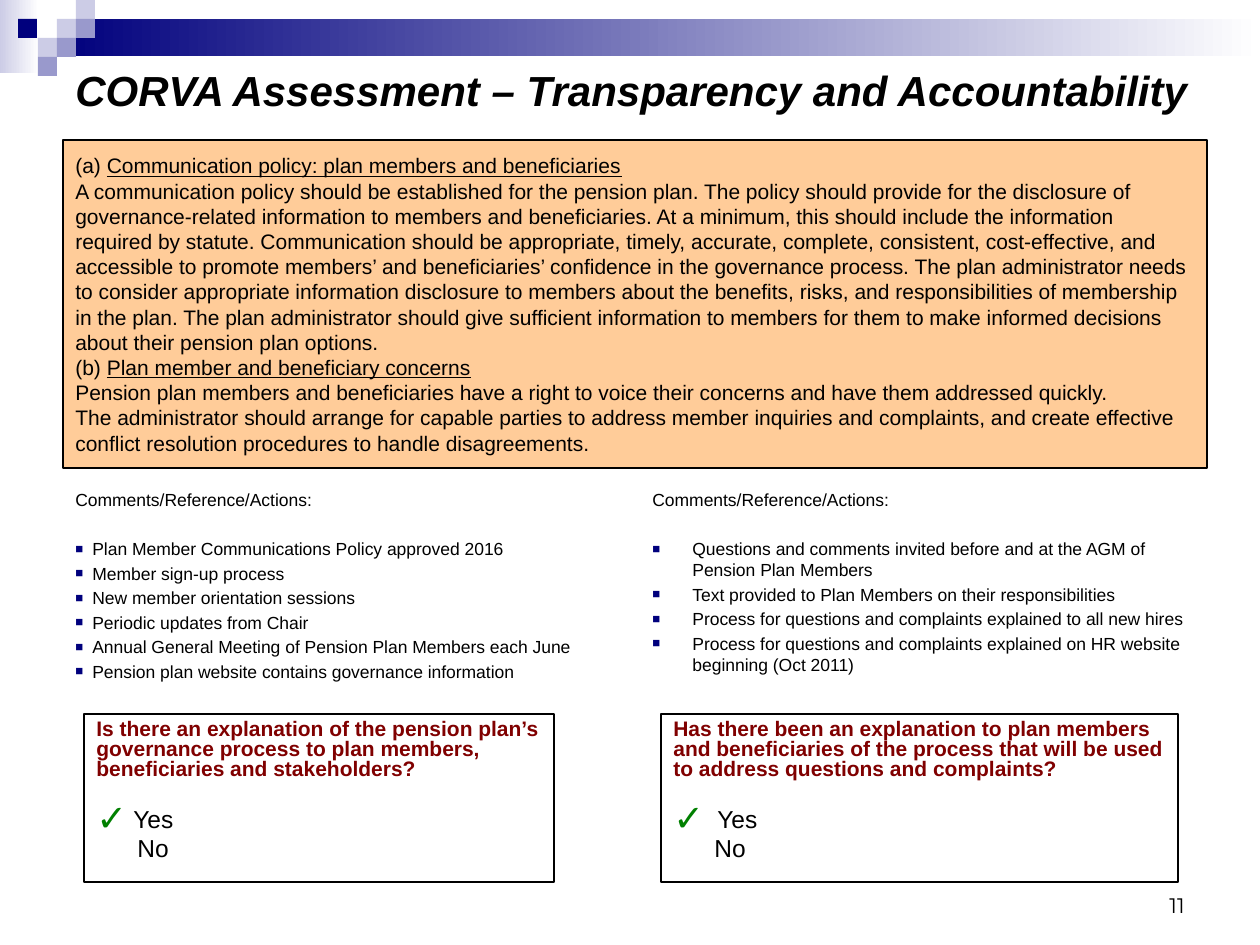
from lxml.etree import SubElement
from pptx import Presentation
from pptx.dml.color import RGBColor
from pptx.enum.shapes import MSO_SHAPE as Shape
from pptx.enum.text import MSO_ANCHOR as Anchor, PP_ALIGN as Align
from pptx.oxml.ns import qn
from pptx.util import Pt

SCALE = 914400 / 126
NAVY, LILAC, VIOLET, WHITE, BLACK = "00007D", "CCCCE6", "9999CC", "FFFFFF", "000000"
MAROON, GREEN, PEACH = "800000", "008000", "FFCC99"


def color(value):
    return RGBColor.from_string(value)


def write(frame, text, size=12, hue=BLACK, font="Arial", bold=False, italic=False,
          underline=False, before=0, spacing=None, align=Align.LEFT, margin=0,
          bullet=None, join=False):
    para = frame.paragraphs[-1]
    if para.runs and not join:
        para = frame.add_paragraph()
    if not join:
        para.alignment = align
        para.space_before = Pt(before)
        para.line_spacing = spacing
        props = para._p.get_or_add_pPr()
        props.set("marL", str(round(margin * SCALE)))
        props.set("indent", str(round(-margin * SCALE) if bullet else 0))
        if bullet:
            mark, mark_hue, percent = bullet
            tint = SubElement(props, qn("a:buClr"))
            SubElement(tint, qn("a:srgbClr"), val=mark_hue)
            SubElement(props, qn("a:buSzPct"), val=str(percent * 1000))
            SubElement(props, qn("a:buFont"), typeface="Arial")
            SubElement(props, qn("a:buChar"), char=mark)
    for index, line in enumerate(text.split("\n")):
        if index:
            para.add_line_break()
        span = para.add_run()
        span.text = line
        span.font.size = Pt(size)
        span.font.name = font
        span.font.bold = bold
        span.font.italic = italic
        span.font.underline = underline
        span.font.color.rgb = color(hue)


deck = Presentation()
deck.slide_width, deck.slide_height = round(1260 * SCALE), round(945 * SCALE)
page = deck.slides.add_slide(deck.slide_layouts[6])

banner = [
    (0, 0, 39, 73, (LILAC, WHITE)),
    (57, 19, 1203, 37, (NAVY, WHITE)),
    (57, 19, 19, 19, LILAC),
    (76, 0, 19, 19, LILAC),
    (76, 19, 19, 19, VIOLET),
    (38, 38, 19, 19, LILAC),
    (18, 19, 19, 19, NAVY),
    (57, 38, 19, 19, VIOLET),
    (38, 57, 19, 19, VIOLET),
]
for *place, fill in banner:
    tile = page.shapes.add_shape(Shape.RECTANGLE, *[round(n * SCALE) for n in place])
    tile.shadow.inherit = False
    tile.line.fill.background()
    if isinstance(fill, tuple):
        tile.fill.gradient()
        tile.fill.gradient_angle = 0
        for stop, hue in zip(tile.fill.gradient_stops, fill):
            stop.color.rgb = color(hue)
    else:
        tile.fill.solid()
        tile.fill.fore_color.rgb = color(fill)

panels = {
    "number": (903, 861, 294, 63, Anchor.BOTTOM, None, False),
    "title": (63, 63, 1155, 53, Anchor.MIDDLE, None, False),
    "policy": (63, 140, 1144, 328, Anchor.TOP, PEACH, True),
    "left notes": (63, 483, 567, 225, Anchor.TOP, None, False),
    "right notes": (640, 483, 588, 225, Anchor.TOP, None, False),
    "left check": (84, 714, 470, 168, Anchor.TOP, None, True),
    "right check": (661, 714, 517, 168, Anchor.TOP, None, True),
}
frames = {}
for name, (*place, anchor, fill, outlined) in panels.items():
    box = page.shapes.add_textbox(*[round(n * SCALE) for n in place])
    if fill:
        box.fill.solid()
        box.fill.fore_color.rgb = color(fill)
    if outlined:
        box.line.color.rgb = color(BLACK)
        box.line.width = Pt(0.75)
    frames[name] = box.text_frame
    box.text_frame.word_wrap = True
    box.text_frame.vertical_anchor = anchor

write(frames["number"], "11", font="Montserrat", align=Align.RIGHT)
write(frames["title"], "CORVA Assessment – Transparency and Accountability",
      size=24, bold=True, italic=True)

policy = frames["policy"]
policy.margin_top = round(13 * SCALE)
sections = [
    ("(a) ", "Communication policy: plan members and beneficiaries", [
        "A communication policy should be established for the pension plan. The policy should "
        "provide for the disclosure of governance-related information to members and "
        "beneficiaries. At a minimum, this should include the information required by statute. "
        "Communication should be appropriate, timely, accurate, complete, consistent, "
        "cost-effective, and accessible to promote members’ and beneficiaries’ confidence in "
        "the governance process. The plan administrator needs to consider appropriate "
        "information disclosure to members about the benefits, risks, and responsibilities of "
        "membership in the plan. The plan administrator should give sufficient information to "
        "members for them to make informed decisions about their pension plan options.",
    ]),
    ("(b) ", "Plan member and beneficiary concerns", [
        "Pension plan members and beneficiaries have a right to voice their concerns and have "
        "them addressed quickly.",
        "The administrator should arrange for capable parties to address member inquiries and "
        "complaints, and create effective conflict resolution procedures to handle "
        "disagreements.",
    ]),
]
for label, heading, paragraphs in sections:
    write(policy, label)
    write(policy, heading, underline=True, join=True)
    for text in paragraphs:
        write(policy, text)

notes = {
    "left notes": (17, [
        "Plan Member Communications Policy approved 2016",
        "Member sign-up process",
        "New member orientation sessions",
        "Periodic updates from Chair",
        "Annual General Meeting of Pension Plan Members each June",
        "Pension plan website contains governance information",
    ]),
    "right notes": (40, [
        "Questions and comments invited before and at the AGM of\nPension Plan Members",
        "Text provided to Plan Members on their responsibilities",
        "Process for questions and complaints explained to all new hires",
        "Process for questions and complaints explained on HR website\nbeginning (Oct 2011)",
    ]),
}
for name, (margin, items) in notes.items():
    write(frames[name], "Comments/Reference/Actions:", size=10)
    for index, item in enumerate(items):
        write(frames[name], item, size=10, before=2 if index else 16,
              margin=margin, bullet=("■", NAVY, 75))

checks = {
    "left check": (37, "Is there an explanation of the pension plan’s governance process to "
                       "plan members, beneficiaries and stakeholders?"),
    "right check": (44, "Has there been an explanation to plan members and beneficiaries of "
                        "the process that will be used to address questions and complaints?"),
}
for name, (margin, question) in checks.items():
    write(frames[name], question, hue=MAROON, bold=True, spacing=0.8)
    write(frames[name], "Yes", size=14, before=16.7, spacing=0.8,
          margin=margin, bullet=("✓", GREEN, 150))
    write(frames[name], "No", size=14, before=2.8, spacing=0.8, margin=41)

deck.save("out.pptx")
